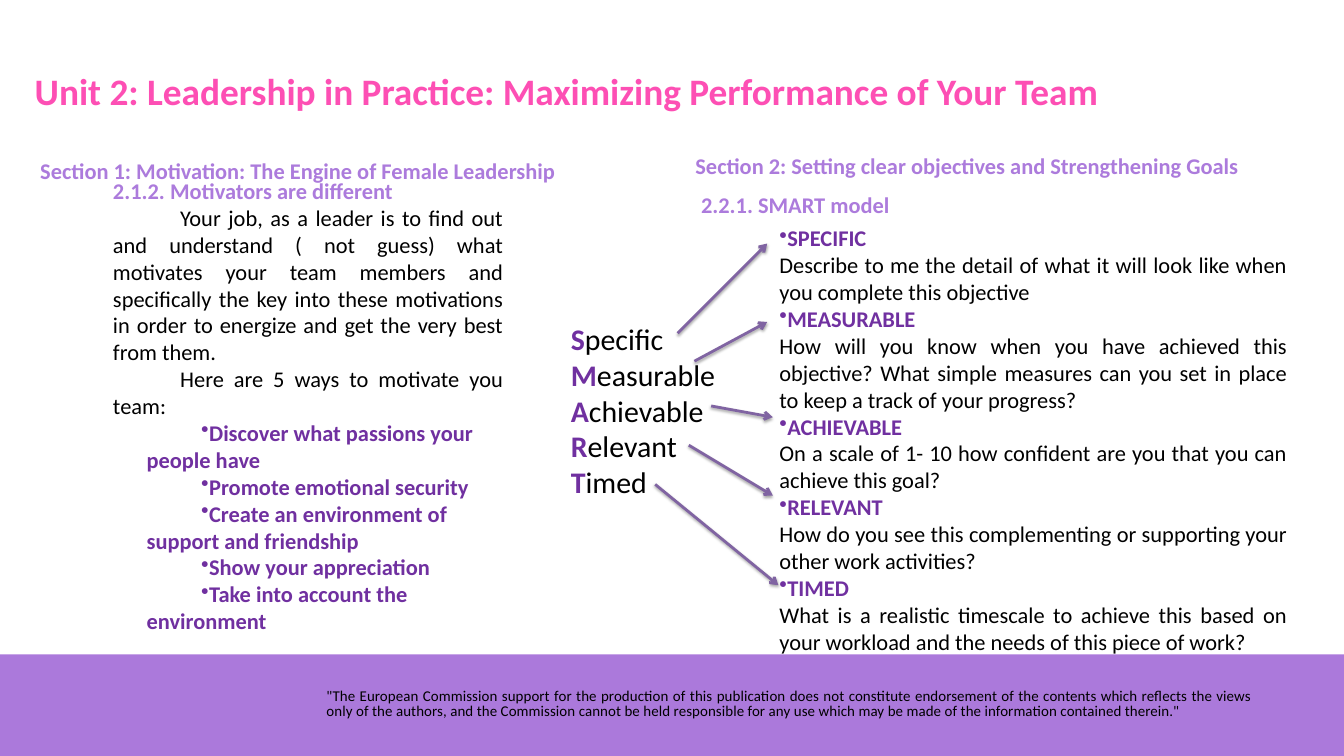
from dataclasses import dataclass

from lxml import etree
from pptx import Presentation
from pptx.dml.color import RGBColor
from pptx.enum.shapes import MSO_CONNECTOR, MSO_SHAPE
from pptx.enum.text import MSO_ANCHOR, MSO_AUTO_SIZE, PP_ALIGN
from pptx.oxml import parse_xml
from pptx.oxml.ns import qn
from pptx.util import Pt

PX = 9525
LEFT, JUST = PP_ALIGN.LEFT, PP_ALIGN.JUSTIFY
TOP, MIDDLE = MSO_ANCHOR.TOP, MSO_ANCHOR.MIDDLE
FIXED = MSO_AUTO_SIZE.NONE
STRAIGHT, RECT = MSO_CONNECTOR.STRAIGHT, MSO_SHAPE.RECTANGLE

SHADOW = (
    '<a:effectLst xmlns:a="http://schemas.openxmlformats.org/drawingml/2006/main">'
    '<a:outerShdw blurRad="39370" dist="22860" dir="5400000" rotWithShape="0">'
    '<a:srgbClr val="000000"><a:alpha val="35000"/></a:srgbClr>'
    '</a:outerShdw></a:effectLst>'
)


@dataclass(frozen=True)
class Theme:
    font: str = "Calibri"
    pink: str = "FD4FB4"
    lilac: str = "AC7BDC"
    purple: str = "7030A0"
    band: str = "AB79DB"
    arrow: str = "8064A2"
    ink: str = "000000"
    title: int = 40
    smart: int = 32
    body: int = 24
    note: int = 16


THEME = Theme()

WAYS = [
    "Discover what passions your people have",
    "Promote emotional security",
    "Create an environment of support and friendship",
    "Show your appreciation",
    "Take into account the environment",
]
GOALS = [
    ("Specific", "Describe to me the detail of what it will look like when you "
     "complete this objective"),
    ("Measurable", "How will you know when you have achieved this objective? What "
     "simple measures can you set in place to keep a track of your progress?"),
    ("Achievable", "On a scale of 1- 10 how confident are you that you can achieve "
     "this goal?"),
    ("Relevant", "How do you see this complementing or supporting your other work "
     "activities?"),
    ("Timed", "What is a realistic timescale to achieve this based on your workload "
     "and the needs of this piece of work?"),
]
ARROWS = [
    (968, 476, 1096, 348),
    (992, 516, 1096, 460),
    (1016, 580, 1104, 596),
    (984, 636, 1104, 708),
    (936, 692, 1112, 836),
]
NOTE = (
    '"The European Commission support for the production of this publication does '
    'not constitute endorsement of the contents which reflects the views only of the '
    'authors, and the Commission cannot be held responsible for any use which may be '
    'made of the information contained therein."'
)


def scale(*nums):
    return [num * PX for num in nums]


def write(frame, text, size=THEME.body, color=THEME.ink, bold=False, align=JUST,
          margin=0, indent=0, bullet=False, lead=0, pitch=None, track=0):
    para = frame.paragraphs[0]
    if para.runs:
        para = frame.add_paragraph()
    para.alignment = align
    if pitch:
        para.line_spacing = Pt(pitch)
    props = para._p.get_or_add_pPr()
    props.set("marL", str(margin * PX))
    props.set("indent", str(indent * PX))
    mark = etree.SubElement(props, qn("a:buChar" if bullet else "a:buNone"))
    if bullet:
        mark.set("char", "•")
    parts = [(text[:lead], THEME.purple, True), (text[lead:], color, bold)]
    for part, tint, heavy in parts:
        if not part:
            continue
        run = para.add_run()
        run.text = part
        run.font.name = THEME.font
        run.font.size = Pt(size)
        run.font.bold = heavy
        run.font.color.rgb = RGBColor.from_string(tint)
        if track:
            run._r.get_or_add_rPr().set("spc", str(track))


def setup(frame, anchor=TOP, wrap=True):
    frame.word_wrap = wrap
    frame.auto_size = FIXED
    frame.vertical_anchor = anchor
    return frame


def add_box(slide, *area, anchor=TOP, wrap=True):
    return setup(slide.shapes.add_textbox(*scale(*area)).text_frame, anchor, wrap)


def add_title(slide, text, *area):
    title = slide.shapes.title
    title.left, title.top, title.width, title.height = scale(*area)
    write(setup(title.text_frame), text, size=THEME.title, color=THEME.pink,
          bold=True, align=LEFT)


def add_head(slide, text, *area, wrap=False):
    write(add_box(slide, *area, wrap=wrap), text, color=THEME.lilac, bold=True,
          align=LEFT)


def add_arrow(slide, *ends):
    arrow = slide.shapes.add_connector(STRAIGHT, *scale(*ends))
    arrow.line.color.rgb = RGBColor.from_string(THEME.arrow)
    arrow.line.width = Pt(3)
    tip = etree.SubElement(arrow.line._get_or_add_ln(), qn("a:tailEnd"))
    tip.set("type", "arrow")
    arrow._element.spPr.append(parse_xml(SHADOW))


def add_footer(slide):
    band = slide.shapes.add_shape(RECT, *scale(0, 935, 1920, 145))
    band.shadow.inherit = False
    band.fill.solid()
    band.fill.fore_color.rgb = RGBColor.from_string(THEME.band)
    band.line.fill.background()
    write(add_box(slide, 456, 980, 1344, 53), NOTE, size=THEME.note, margin=1,
          pitch=16.1, track=10)


def add_ways(slide):
    frame = add_box(slide, 152, 284, 576, 591, anchor=MIDDLE)
    write(frame, "2.1.2. Motivators are different", color=THEME.lilac, bold=True)
    write(frame, "Your job, as a leader is to find out and understand ( not guess) "
          "what motivates your team members and specifically the key into these "
          "motivations in order to energize and get the very best from them.",
          indent=96)
    write(frame, "Here are 5 ways to motivate you team:", indent=96)
    for way in WAYS:
        write(frame, way, color=THEME.purple, bold=True, align=LEFT, margin=48,
              indent=78, bullet=True)


def add_goals(slide):
    names = add_box(slide, 728, 452, 344, 268, anchor=MIDDLE)
    goals = add_box(slide, 1104, 316, 744, 630)
    for name, text in GOALS:
        write(names, name, size=THEME.smart, margin=78, lead=1)
        write(goals, name.upper(), color=THEME.purple, bold=True, bullet=True)
        write(goals, text)


def main():
    deck = Presentation()
    deck.slide_width, deck.slide_height = scale(1920, 1080)
    slide = deck.slides.add_slide(deck.slide_layouts[5])
    add_footer(slide)
    add_title(slide, "Unit 2: Leadership in Practice: Maximizing Performance of "
              "Your Team", 40, 92, 1576, 74)
    add_ways(slide)
    add_head(slide, "Section 1: Motivation: The Engine of Female Leadership",
             48, 220, 763, 48)
    add_head(slide, "Section 2: Setting clear objectives and Strengthening Goals",
             984, 212, 804, 48)
    add_goals(slide)
    add_head(slide, "2.2.1. SMART model", 992, 268, 304, 48, wrap=True)
    for ends in ARROWS:
        add_arrow(slide, *ends)
    deck.save("out.pptx")


if __name__ == "__main__":
    main()
